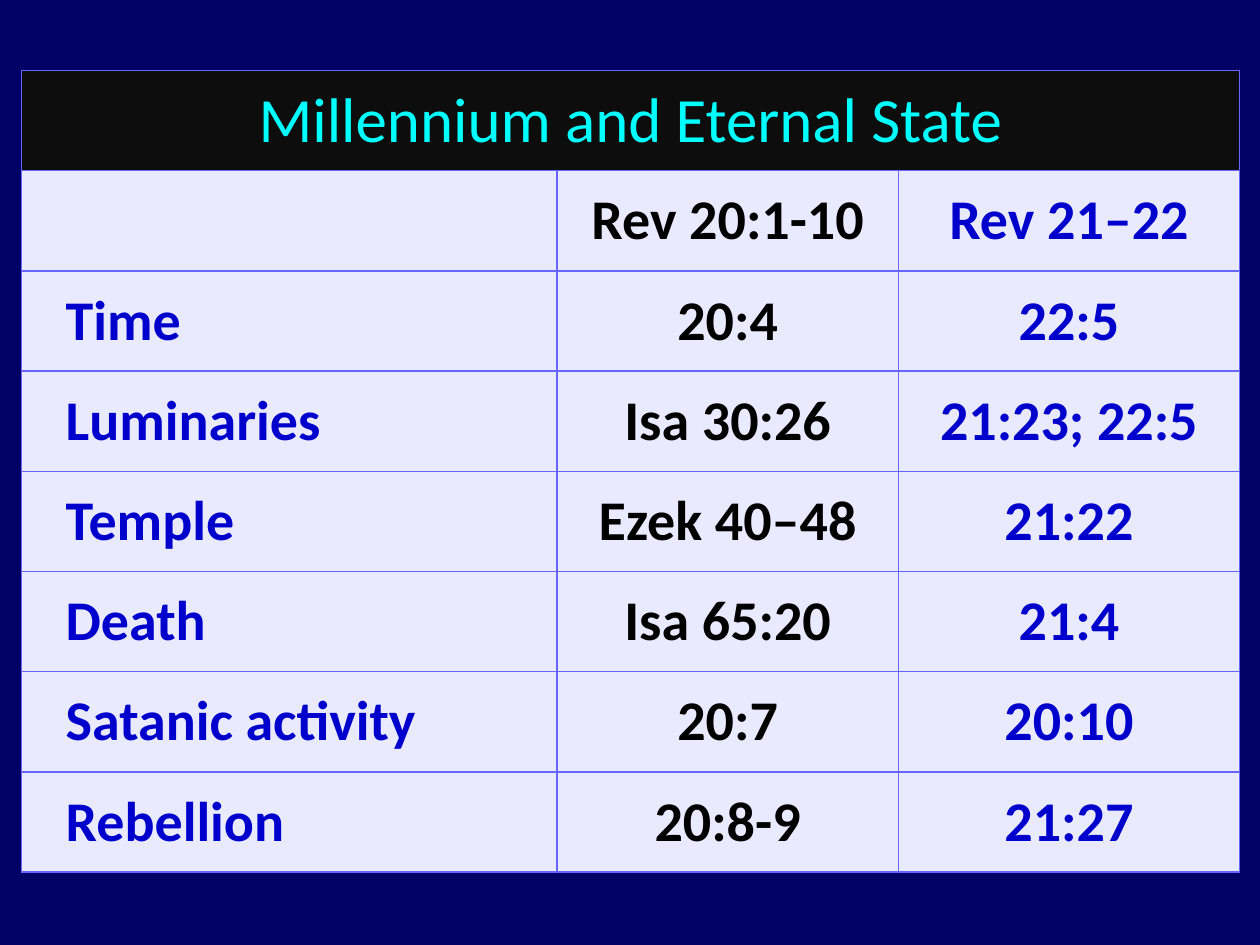
from lxml import etree
from pptx import Presentation
from pptx import util as u
from pptx.dml import color
from pptx.enum import text
from pptx.oxml import ns

COLORS = {
    "background": "000066",
    "border": "6666FF",
    "title_fill": "0D0D0D",
    "title_text": "00FFFF",
    "body_fill": "EAEAFF",
    "black": "000000",
    "blue": "0000CC",
}
ROWS = [
    ("Millennium and Eternal State", "", ""),
    ("", "Rev 20:1-10", "Rev 21–22"),
    ("Time", "20:4", "22:5"),
    ("Luminaries", "Isa 30:26", "21:23; 22:5"),
    ("Temple", "Ezek 40–48", "21:22"),
    ("Death", "Isa 65:20", "21:4"),
    ("Satanic activity", "20:7", "20:10"),
    ("Rebellion", "20:8-9", "21:27"),
]
COLUMN_WIDTHS = [10.8, 6.88, 6.88]
COLUMN_COLORS = ["blue", "black", "blue"]
ROW_HEIGHT = 2.02


def rgb(name):
    return color.RGBColor.from_string(COLORS[name])


def add_borders(cell):
    properties = cell._tc.get_or_add_tcPr()
    for side in ("lnL", "lnR", "lnT", "lnB"):
        line = etree.SubElement(properties, ns.qn(f"a:{side}"), w=str(u.Pt(1)))
        fill = etree.SubElement(line, ns.qn("a:solidFill"))
        etree.SubElement(fill, ns.qn("a:srgbClr"), val=COLORS["border"])


# Slide and background
presentation = Presentation()
presentation.slide_width, presentation.slide_height = u.Cm(25.4), u.Cm(19.05)
slide = presentation.slides.add_slide(presentation.slide_layouts[6])
slide.background.fill.solid()
slide.background.fill.fore_color.rgb = rgb("background")

# Table grid
shape = slide.shapes.add_table(
    len(ROWS), len(COLUMN_WIDTHS), u.Cm(0.43), u.Cm(1.42),
    u.Cm(sum(COLUMN_WIDTHS)), u.Cm(ROW_HEIGHT * len(ROWS)))
table = shape.table
for column, width in zip(table.columns, COLUMN_WIDTHS):
    column.width = u.Cm(width)
for row in table.rows:
    row.height = u.Cm(ROW_HEIGHT)
table.cell(0, 0).merge(table.cell(0, 2))

# Cell contents and formats
for row_index, row_words in enumerate(ROWS):
    is_title = row_index == 0
    for column_index, words in enumerate(row_words):
        cell = table.cell(row_index, column_index)
        add_borders(cell)
        cell.fill.solid()
        cell.fill.fore_color.rgb = rgb("title_fill" if is_title else "body_fill")
        cell.vertical_anchor = text.MSO_ANCHOR.MIDDLE
        if not words:
            continue
        paragraph = cell.text_frame.paragraphs[0]
        if is_title or column_index > 0:
            paragraph.alignment = text.PP_ALIGN.CENTER
        else:
            paragraph._p.get_or_add_pPr().set("marL", str(u.Cm(0.64)))
        run = paragraph.add_run()
        run.text = words
        font_format = {
            "name": "Calibri",
            "size": u.Pt(36 if is_title else 32),
            "bold": not is_title,
        }
        for attribute, value in font_format.items():
            setattr(run.font, attribute, value)
        run.font.color.rgb = rgb("title_text" if is_title else COLUMN_COLORS[column_index])

presentation.save("out.pptx")
